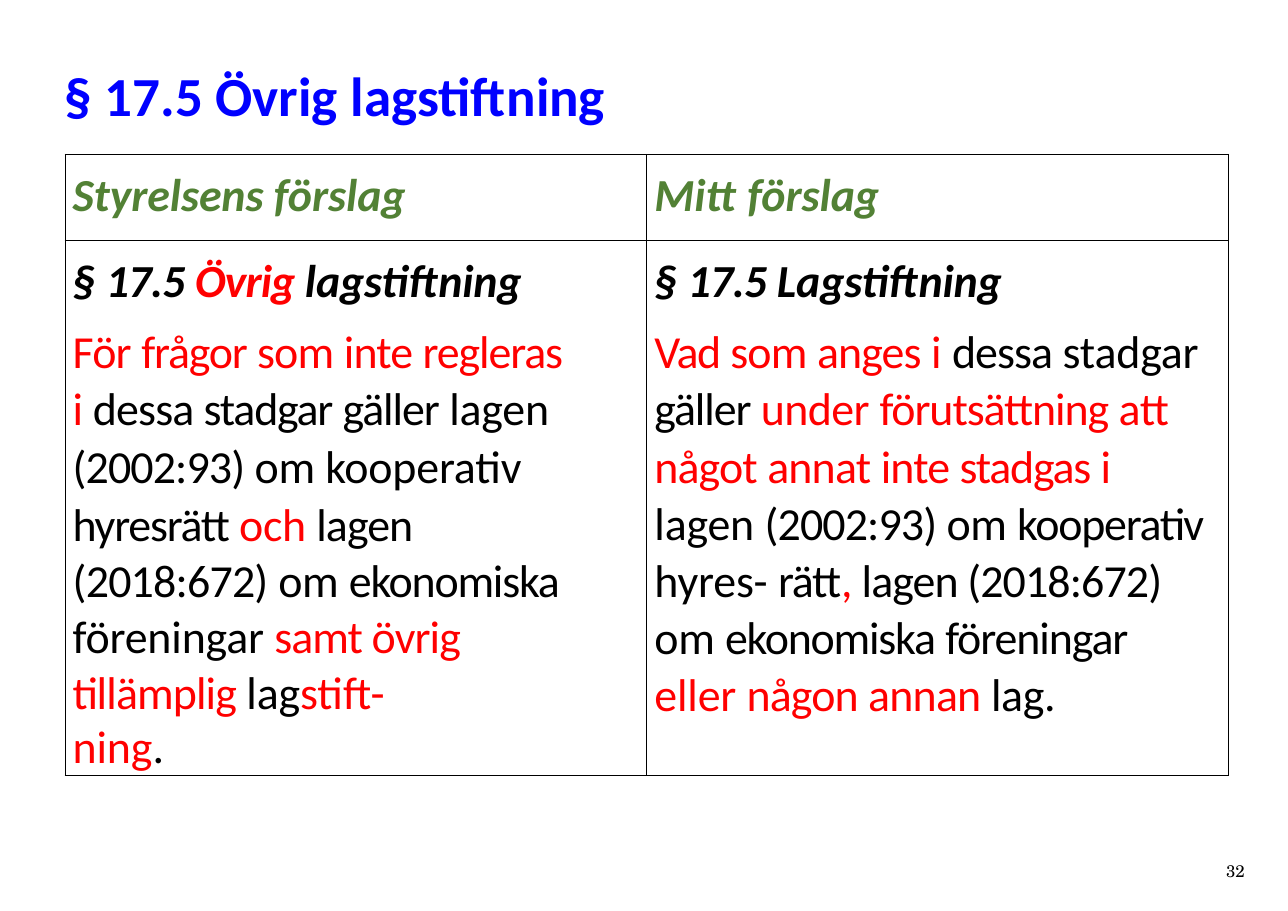
from lxml import etree
from pptx import Presentation
from pptx.dml.color import RGBColor
from pptx.enum.text import MSO_ANCHOR, MSO_AUTO_SIZE, PP_ALIGN
from pptx.oxml.ns import qn
from pptx.util import Pt

PX = 9144
LEFT = PP_ALIGN.LEFT
TOP = MSO_ANCHOR.TOP
NO_FIT = MSO_AUTO_SIZE.NONE
COLORS = {"blue": "0000FF", "green": "528135", "red": "FF0000", "black": "000000"}

HEADINGS = ["Styrelsens förslag", "Mitt förslag"]
BOARD_TITLE = [("§ ", "black", 0), ("17.5 ", "black", -0.5),
               ("Övrig ", "red", -0.6), ("lagstiftning", "black", -0.1)]
BOARD_START = [
    ("För ", "red", -0.5), ("frågor ", "red", -0.8), ("som ", "red", -0.5),
    ("inte ", "red", -0.6), ("regleras ", "red", -0.7), ("i ", "red", -0.5),
    ("dessa", "black", -0.5), (" stadgar ", "black", -0.8), ("gäller ", "black", -0.7),
    ("lagen ", "black", -0.1), ("(2002:93) ", "black", -0.6), ("om ", "black", -0.2),
    ("kooperativ", "black", -0.1),
]
BOARD_MIDDLE = [
    ("hyresrätt ", "black", -0.8), ("och ", "red", -0.2), ("lagen ", "black", -0.6),
    ("(2018:672) ", "black", -0.5), ("om ", "black", -0.2), ("ekonomiska ", "black", -0.8),
    ("föreningar ", "black", -0.1), ("samt övrig tillämplig ", "red", -0.6),
    ("lag", "black", -0.1), ("stift-", "red", -0.1),
]
BOARD_END = [("ning", "red", -0.1), (".", "black", -0.1)]
MY_TITLE = [("§ ", "black", 0), ("17.5 ", "black", -0.5), ("Lagstiftning", "black", -0.1)]
MY_TEXT = [
    ("Vad ", "red", -0.9), ("som ", "red", -0.5), ("anges ", "red", -0.6), ("i ", "red", 0),
    ("dessa ", "black", -0.6), ("stadgar ", "black", -0.1), ("gäller ", "black", -0.7),
    ("under ", "red", -0.4), ("förutsättning ", "red", -0.7), ("att ", "red", -0.2),
    ("något ", "red", -0.6), ("annat ", "red", -0.5), ("inte ", "red", -0.6),
    ("stadgas ", "red", -0.8), ("i ", "red", 0), ("lagen ", "black", -0.1),
    ("(2002:93) ", "black", -0.6), ("om ", "black", -0.2), ("kooperativ ", "black", -0.8),
    ("hyres- ", "black", -0.1), ("rätt", "black", -0.8), (", ", "red", -0.8),
    ("lagen (2018:672) ", "black", -0.6), ("om ", "black", -0.2),
    ("ekonomiska ", "black", -0.8), ("föreningar ", "black", -0.7),
    ("eller ", "red", -0.1), ("någon ", "red", -0.6), ("annan ", "red", -0.5),
    ("lag.", "black", -0.2),
]


def rgb(name):
    return RGBColor.from_string(COLORS[name])


def place(sp, box):
    sp.left, sp.top, sp.width, sp.height = (v * PX for v in box)


def set_frame(tf, left=0, top=0):
    tf.word_wrap = True
    tf.auto_size = NO_FIT
    tf.vertical_anchor = TOP
    tf.margin_left, tf.margin_top = left * PX, top * PX
    tf.margin_right = tf.margin_bottom = 0


def write(p, runs, size, font="Calibri", bold=False, italic=False, before=0, line=None):
    p.alignment = LEFT
    p.space_before = Pt(before)
    if line:
        p.line_spacing = line
    p.font.name, p.font.size = font, Pt(size)
    p.font.bold, p.font.italic = bold, italic
    for text, color, spacing in runs:
        r = p.add_run()
        r.text = text
        r.font.color.rgb = rgb(color)
        if spacing:
            r.font._element.set("spc", str(round(spacing * 100)))


def add_title(s, box):
    sp = s.shapes.title
    place(sp, box)
    set_frame(sp.text_frame, 1, 1)
    write(sp.text_frame.paragraphs[0],
          [("§ 17.5 Övrig ", "blue", 0), ("lagstiftning", "blue", -0.1)],
          36, bold=True, before=1)


def add_borders(cell):
    tc_pr = cell._tc.get_or_add_tcPr()
    for i, side in enumerate(("lnL", "lnR", "lnT", "lnB")):
        ln = etree.Element(qn(f"a:{side}"), w=str(Pt(0.5)))
        fill = etree.SubElement(ln, qn("a:solidFill"))
        etree.SubElement(fill, qn("a:srgbClr"), val=COLORS["black"])
        tc_pr.insert(i, ln)


def fill_cell(cell, paragraphs, right):
    cell.fill.background()
    add_borders(cell)
    cell.vertical_anchor = TOP
    cell.margin_left, cell.margin_top = 7 * PX, 12 * PX
    cell.margin_right, cell.margin_bottom = right * PX, 0
    tf = cell.text_frame
    for i, (runs, style) in enumerate(paragraphs):
        p = tf.add_paragraph() if i else tf.paragraphs[0]
        write(p, runs, 30, **style)


def add_comparison(s, box):
    x, y, w, h = box
    header_h = 78
    table = s.shapes.add_table(2, 2, *(v * PX for v in box)).table
    table.first_row = table.horz_banding = False
    for column in table.columns:
        column.width = w // 2 * PX
    table.rows[0].height = header_h * PX
    table.rows[1].height = (h - header_h) * PX

    heading = dict(bold=True, italic=True, before=8.4)
    opening = dict(before=9.6, line=1.02)
    bodies = [
        [(BOARD_TITLE, heading), (BOARD_START, opening),
         (BOARD_MIDDLE, dict(before=1.3, line=Pt(36.6))),
         (BOARD_END, dict(line=Pt(35.3)))],
        [(MY_TITLE, heading), (MY_TEXT, opening)],
    ]
    for col, (label, body, right) in enumerate(zip(HEADINGS, bodies, (63, 10))):
        fill_cell(table.cell(0, col), [([(label, "green", -0.05)], heading)], 0)
        fill_cell(table.cell(1, col), body, right)


def add_page_number(s, box):
    sp = s.shapes.add_textbox(*(v * PX for v in box))
    set_frame(sp.text_frame, 1)
    write(sp.text_frame.paragraphs[0], [("32", "black", -0.2)], 11,
          font="TeX Gyre Schola", before=0.1)


def main():
    prs = Presentation()
    prs.slide_width, prs.slide_height = 1169 * PX, 827 * PX
    s = prs.slides.add_slide(prs.slide_layouts[5])
    add_page_number(s, (1112, 781, 24, 20))
    add_title(s, (58, 55, 1054, 63))
    add_comparison(s, (59, 140, 1056, 526))
    prs.save("out.pptx")


if __name__ == "__main__":
    main()
